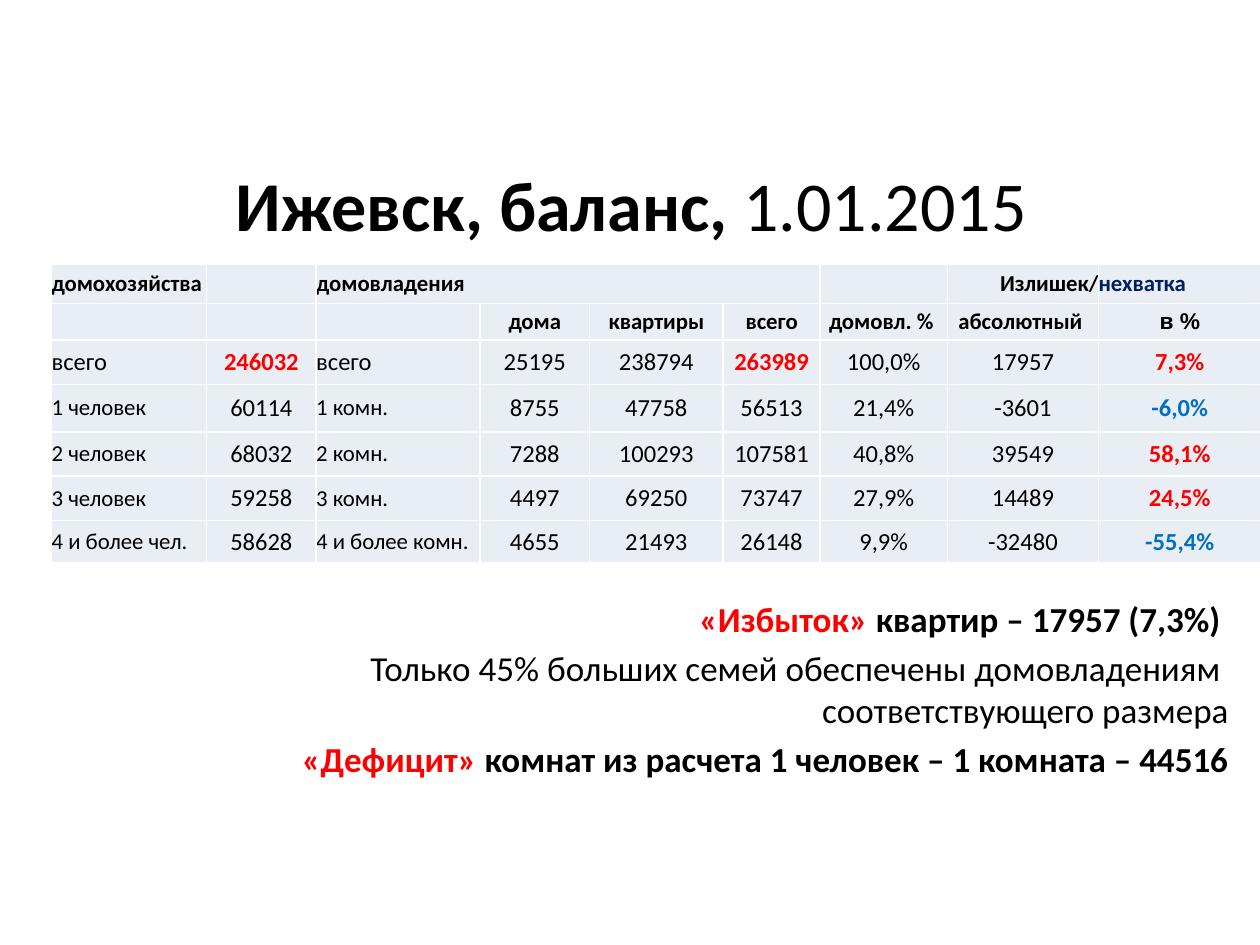
from dataclasses import dataclass

from lxml import etree
from pptx import Presentation
from pptx.dml.color import RGBColor
from pptx.enum.text import MSO_ANCHOR, PP_ALIGN
from pptx.oxml.ns import qn
from pptx.util import Inches, Pt

LEFT, MID, RIGHT = PP_ALIGN.LEFT, PP_ALIGN.CENTER, PP_ALIGN.RIGHT
TOP, CENTER = MSO_ANCHOR.TOP, MSO_ANCHOR.MIDDLE


@dataclass(frozen=True)
class Theme:
    font: str = "Calibri"
    alt: str = "Arial"
    ink: str = "000000"
    red: str = "FF0000"
    blue: str = "0070C0"
    navy: str = "002060"
    cell: str = "E9EDF4"
    rule: str = "FFFFFF"
    title: int = 40
    body: int = 20
    value: int = 14
    label: int = 13


THEME = Theme()

COLS = [1.23, 0.87, 1.3, 0.87, 1.06, 0.77, 1.01, 1.2, 1.29]
ROWS = [0.31, 0.29, 0.35, 0.38, 0.35, 0.35, 0.34]
HEADS = 2
TOTAL = 2
DATA = [
    ["домохозяйства", "", "домовладения", "", "", "", "", "Излишек/", "нехватка"],
    ["", "", "", "дома", "квартиры", "всего", "домовл. % ", "абсолютный ", "в %"],
    ["всего", "246032", "всего", "25195", "238794", "263989", "100,0%", "17957", "7,3%"],
    ["1 человек", "60114", "1 комн.", "8755", "47758", "56513", "21,4%", "-3601", "-6,0%"],
    ["2 человек", "68032", "2 комн.", "7288", "100293", "107581", "40,8%", "39549", "58,1%"],
    ["3 человек", "59258", "3 комн.", "4497", "69250", "73747", "27,9%", "14489", "24,5%"],
    ["4 и более чел.", "58628", "4 и более комн.", "4655", "21493", "26148", "9,9%",
     "-32480", "-55,4%"],
]


def write(para, text, size, color=THEME.ink, bold=False, font=THEME.font, align=LEFT):
    para.alignment = align
    for num, line in enumerate(text.split("\n")):
        if num:
            para.add_line_break()
        run = para.add_run()
        run.text = line
        run.font.name = font
        run.font.size = Pt(size)
        run.font.bold = bold
        run.font.color.rgb = RGBColor.from_string(color)


def add_box(slide, left, top, width, height, paras, size, align, anchor=TOP, gap=0):
    box = slide.shapes.add_textbox(
        Inches(left), Inches(top), Inches(width), Inches(height))
    frame = box.text_frame
    frame.word_wrap = True
    frame.vertical_anchor = anchor
    for num, runs in enumerate(paras):
        para = frame.add_paragraph() if num else frame.paragraphs[0]
        if num:
            para.space_before = Pt(gap)
        for text, look in runs:
            write(para, text, size, align=align, **look)


def add_rules(cell):
    props = cell._tc.get_or_add_tcPr()
    for side in ("lnL", "lnR", "lnT", "lnB"):
        line = etree.SubElement(props, qn(f"a:{side}"), w=str(Pt(1)))
        fill = etree.SubElement(line, qn("a:solidFill"))
        etree.SubElement(fill, qn("a:srgbClr"), val=THEME.rule)


def get_look(row, col, text):
    last = len(COLS) - 1
    look = {"size": THEME.value, "align": LEFT if col in (0, 2) else MID}
    if row < HEADS:
        look.update(size=THEME.label, bold=True)
        if row == 0:
            look["align"] = RIGHT if col == last - 1 else LEFT
            look["color"] = THEME.navy if col == last else THEME.ink
        elif col == last:
            look["font"] = THEME.alt
    elif col == last:
        look.update(bold=True, color=THEME.blue if text.startswith("-") else THEME.red)
    elif row == TOTAL and col in (1, 5):
        look.update(bold=True, color=THEME.red)
    elif row > TOTAL and col in (0, 2):
        look["size"] = THEME.label
    return look


def fill_cell(cell, row, col, text):
    cell.margin_left = cell.margin_right = 0
    cell.margin_top = cell.margin_bottom = 0
    cell.vertical_anchor = CENTER
    add_rules(cell)
    cell.fill.solid()
    cell.fill.fore_color.rgb = RGBColor.from_string(THEME.cell)
    para = cell.text_frame.paragraphs[0]
    if text:
        write(para, text, **get_look(row, col, text))
    else:
        etree.SubElement(para._p, qn("a:endParaRPr"), sz=str(THEME.label * 100))


def add_grid(slide, left, top):
    frame = slide.shapes.add_table(
        len(ROWS), len(COLS), Inches(left), Inches(top),
        Inches(sum(COLS)), Inches(sum(ROWS)))
    table = frame.table
    table.first_row = table.horz_banding = False
    for col, width in zip(table.columns, COLS):
        col.width = Inches(width)
    for row, height in zip(table.rows, ROWS):
        row.height = Inches(height)
    for row, texts in enumerate(DATA):
        for col, text in enumerate(texts):
            fill_cell(table.cell(row, col), row, col, text)
    table.cell(0, 2).merge(table.cell(0, 5))


def main():
    deck = Presentation()
    deck.slide_width, deck.slide_height = Inches(10), Inches(7.5)
    slide = deck.slides.add_slide(deck.slide_layouts[6])
    bold = {"bold": True}
    alert = {"bold": True, "color": THEME.red}
    title = [[("Ижевск, баланс, ", bold), ("1.01.2015", {})]]
    notes = [
        [("«Избыток» ", alert), ("квартир – 17957 (7,3%) ", bold)],
        [("Только 45% больших семей обеспечены домовладениям \n"
          "соответствующего размера", {})],
        [("«Дефицит» ", alert),
         ("комнат из расчета 1 человек – 1 комната – 44516", bold)],
    ]
    add_box(slide, 0.51, 0.99, 9, 1.25, title, THEME.title, MID, CENTER)
    add_box(slide, 0.16, 4.69, 9.69, 1.57, notes, THEME.body, RIGHT, gap=4)
    add_grid(slide, 0.41, 2.1)
    deck.save("out.pptx")


if __name__ == "__main__":
    main()
